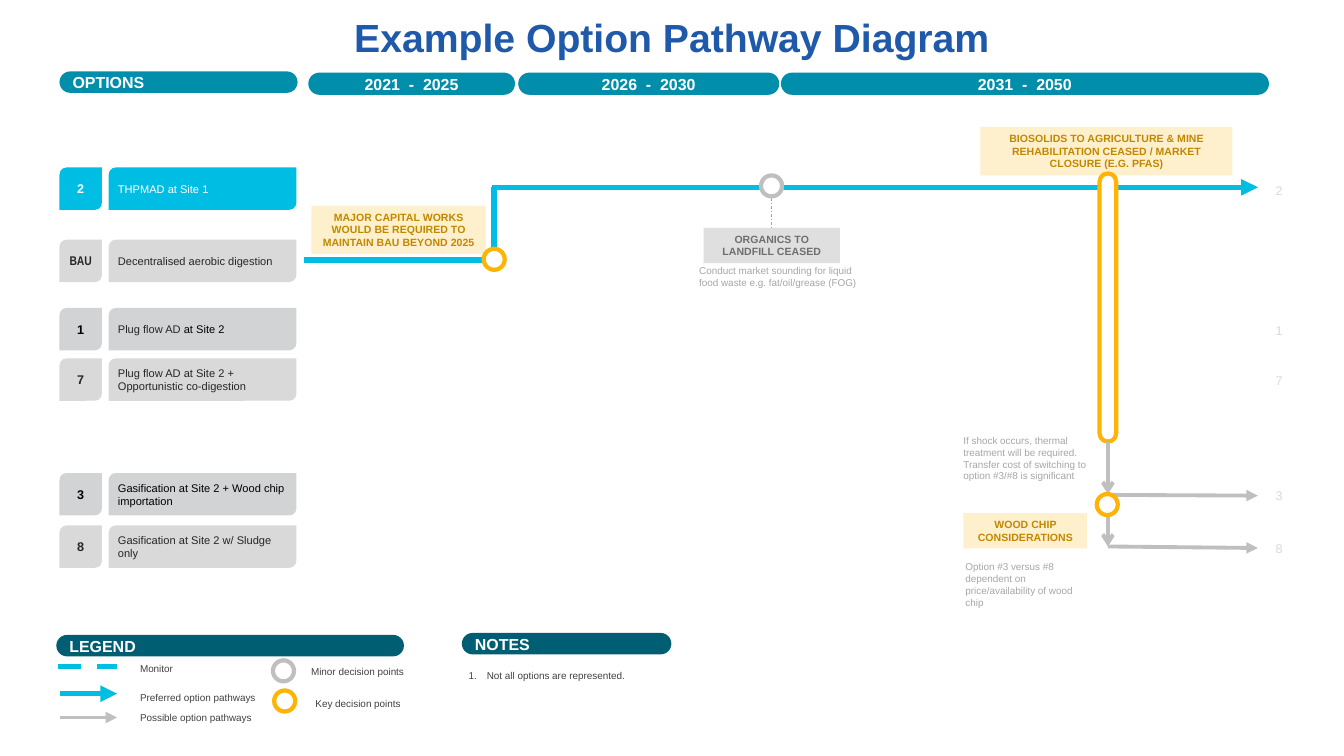
from collections import namedtuple

from lxml.etree import SubElement
from pptx import Presentation
from pptx.dml.color import RGBColor
from pptx.enum.dml import MSO_LINE
from pptx.enum.shapes import MSO_CONNECTOR, MSO_SHAPE
from pptx.enum.text import MSO_ANCHOR, PP_ALIGN
from pptx.oxml.ns import qn
from pptx.util import Cm, Pt

COLORS = {
    "white": "FFFFFF", "black": "000000", "title": "1F59A9",
    "teal": "008EAA", "petrol": "005E72", "cyan": "00BDE3",
    "amber": "FFB303", "cream": "FFF0CD", "ochre": "C28700",
    "light": "D9D9D9", "cool": "D1D3D4", "mist": "DFDFDF",
    "silver": "BFBFBF", "muted": "A6A6A6", "slate": "6E6E6E",
    "ink": "262626", "caption": "404040",
}
ROW_HEIGHT, POINT_SIZE, BAR_HEIGHT = 1.07, 0.53, 0.54
Box = namedtuple("Box", "left top width height")
# Options: code, label runs, distance from the top, fill, text colour
OPTIONS = [
    ("2", [("THPMAD at Site 1", "white")], 0, "cyan", "white"),
    ("BAU", [("Decentralised aerobic digestion", "ink")], 1.82, "light", "ink"),
    ("1", [("Plug flow AD ", "ink"), ("at Site 2", "black")], 3.54, "cool", "black"),
    ("7", [("Plug flow AD at Site 2 + Opportunistic co-digestion", "ink")], 4.81, "light", "ink"),
    ("3", [("Gasification at Site 2 + Wood chip importation", "black")], 7.7, "cool", "black"),
    ("8", [("Gasification at Site 2 w/ Sludge only", "ink")], 9.02, "light", "ink"),
]


def color(name):
    return RGBColor.from_string(COLORS[name])


def inside(box, x, y, width, height):
    return Box(box.left + x, box.top + y, width, height)


def write(holder, runs, size, bold=False, align=PP_ALIGN.LEFT, anchor=MSO_ANCHOR.TOP, font="Arial"):
    frame = holder.text_frame
    frame.word_wrap = True
    frame.vertical_anchor = anchor
    paragraph = frame.paragraphs[0]
    paragraph.alignment = align
    for wording, tint in runs:
        run = paragraph.add_run()
        run.text = wording
        run.font.name, run.font.size, run.font.bold = font, Pt(size), bold
        run.font.color.rgb = color(tint)
    return paragraph


def add_form(slide, kind, box, fill=None, outline=None):
    form = slide.shapes.add_shape(kind, *map(Cm, box))
    form.shadow.inherit = False
    if fill:
        form.fill.solid()
        form.fill.fore_color.rgb = color(fill)
    else:
        form.fill.background()
    if outline:
        form.line.color.rgb = color(outline)
        form.line.width = Pt(3)
    else:
        form.line.fill.background()
    return form


def add_capsule(slide, box, fill, outline=None):
    capsule = add_form(slide, MSO_SHAPE.ROUNDED_RECTANGLE, box, fill, outline)
    capsule.adjustments[0] = 0.5
    return capsule


def add_bar(slide, box, heading, fill, align=PP_ALIGN.LEFT):
    bar = add_capsule(slide, box, fill)
    write(bar, [(heading, "white")], 11.4, True, align, MSO_ANCHOR.MIDDLE)


def add_tile(slide, box, runs, size, fill=None, bold=False, align=PP_ALIGN.CENTER,
             font="Arial", indent=0):
    tile = add_form(slide, MSO_SHAPE.ROUND_2_DIAG_RECTANGLE, box, fill)
    frame = tile.text_frame
    frame.margin_top = frame.margin_right = frame.margin_bottom = 0
    frame.margin_left = Cm(indent)
    write(tile, runs, size, bold, align, MSO_ANCHOR.MIDDLE, font)
    return tile


def add_callout(slide, box, wording, fill="cream", tint="ochre"):
    callout = add_form(slide, MSO_SHAPE.RECTANGLE, box, fill)
    write(callout, [(wording, tint)], 7.5, True, PP_ALIGN.CENTER)
    return callout


def add_caption(slide, box, wording, tint="muted"):
    return write(slide.shapes.add_textbox(*map(Cm, box)), [(wording, tint)], 7.1)


def add_point(slide, box, x, y, outline):
    spot = inside(box, x, y, POINT_SIZE, POINT_SIZE)
    add_form(slide, MSO_SHAPE.OVAL, spot, "white", outline)


def add_path(slide, box, start, end, tint, weight, head=None, dash=None, source=None, target=None):
    points = (box.left + start[0], box.top + start[1], box.left + end[0], box.top + end[1])
    path = slide.shapes.add_connector(MSO_CONNECTOR.STRAIGHT, *map(Cm, points))
    path.line.color.rgb = color(tint)
    path.line.width = Pt(weight)
    if dash:
        path.line.dash_style = dash
    properties = path._element.spPr
    if head:
        SubElement(properties.find(qn("a:ln")), qn("a:tailEnd"), type=head)
    SubElement(properties, qn("a:effectLst"))
    if source:
        path.begin_connect(*source)
    if target:
        path.end_connect(*target)


def build_title(slide, box):
    heading = slide.shapes.add_textbox(*map(Cm, box))
    paragraph = write(heading, [("Example Option Pathway Diagram", "title")], 28, True, PP_ALIGN.CENTER)
    paragraph.space_after = Pt(12)


def build_header(slide, box):
    add_bar(slide, inside(box, 0, 0, 6, BAR_HEIGHT), "OPTIONS", "teal")
    periods = [("2021  -  2025", 6.27, 5.21), ("2026  -  2030", 11.56, 6.58),
               ("2031  -  2050", 18.18, 12.3)]
    for period, x, width in periods:
        add_bar(slide, inside(box, x, 0.03, width, 0.56), period, "teal", PP_ALIGN.CENTER)


def build_options(slide, box):
    for code, label, y, fill, tint in OPTIONS:
        font = "Arial Narrow" if code == "BAU" else "Arial"
        add_tile(slide, inside(box, 0, y, ROW_HEIGHT, ROW_HEIGHT), [(code, tint)], 9, fill, True, font=font)
        add_tile(slide, inside(box, 1.24, y, box.width - 1.24, ROW_HEIGHT), label, 7.9, fill,
                 align=PP_ALIGN.LEFT, indent=0.18)


def build_outcomes(slide, box):
    return {code: add_tile(slide, inside(box, 0, y, box.width, 1.14), [(code, "light")], 9)
            for code, _, y, _, _ in OPTIONS if code != "BAU"}


def build_pathways(slide, box, outcomes):
    # Preferred pathway from BAU to option 2
    add_path(slide, box, (0, 3.35), (4.52, 3.35), "cyan", 4)
    add_path(slide, box, (4.78, 1.52), (4.78, 3.07), "cyan", 4)
    add_path(slide, box, (4.73, 1.52), (box.width, 1.52), "cyan", 4, "triangle")
    add_callout(slide, inside(box, 0.18, 1.98, 4.39, 1.22),
                "MAJOR CAPITAL WORKS WOULD BE REQUIRED TO MAINTAIN BAU BEYOND 2025")
    add_point(slide, box, 4.52, 3.07, "amber")

    # Minor decision on organics
    organics = add_callout(slide, inside(box, 10.06, 2.54, 3.44, 0.89),
                           "ORGANICS TO LANDFILL CEASED", "mist", "slate")
    add_caption(slide, inside(box, 9.7, 3.35, 4.57, 0.86),
                "Conduct market sounding for liquid food waste e.g. fat/oil/grease (FOG)")
    add_path(slide, box, (11.78, 1.6), (11.78, 2.54), "muted", 0.5,
             dash=MSO_LINE.DASH_DOT, target=(organics, 0))
    add_point(slide, box, 11.51, 1.22, "silver")

    # Market shock and the possible pathways
    add_callout(slide, inside(box, 17.04, 0, 6.35, 1.22),
                "BIOSOLIDS TO AGRICULTURE & MINE REHABILITATION CEASED / MARKET CLOSURE (E.G. PFAS)")
    add_caption(slide, inside(box, 16.36, 7.62, 3.89, 1.47),
                "If shock occurs, thermal treatment will be required. "
                "Transfer cost of switching to option #3/#8 is significant")
    shock = add_capsule(slide, inside(box, 20.04, 1.17, 0.42, 6.76), "white", "amber")
    add_path(slide, box, (20.25, 7.93), (20.25, 9.25), "silver", 2.75, "arrow", source=(shock, 2))
    add_path(slide, box, (20.25, 9.3), (20.25, 10.57), "silver", 2.75, "arrow")
    for code, y in (("3", 9.27), ("8", 10.57)):
        add_path(slide, box, (20.25, y), (box.width, y), "silver", 2.75, "triangle",
                 target=(outcomes[code], 1))
    add_point(slide, box, 19.97, 9.25, "amber")
    add_callout(slide, inside(box, 16.61, 9.73, 3.12, 0.89), "WOOD CHIP CONSIDERATIONS")
    add_caption(slide, inside(box, 16.41, 10.8, 3.63, 1.47),
                "Option #3 versus #8 dependent on price/availability of wood chip")


def build_legend(slide, box):
    add_bar(slide, inside(box, 0, 0, box.width, BAR_HEIGHT), "LEGEND", "petrol")
    pathways = [("Monitor", 0.56, 0.79, 0.05, "cyan", 4, None, MSO_LINE.DASH),
                ("Preferred option pathways", 1.3, 1.48, 0.1, "cyan", 4, "triangle", None),
                ("Possible option pathways", 1.81, 2.08, 0.1, "silver", 2.75, "triangle", None)]
    for meaning, text_y, line_y, x, tint, weight, head, dash in pathways:
        add_path(slide, box, (x, line_y), (1.53, line_y), tint, weight, head, dash)
        add_caption(slide, inside(box, 1.86, text_y, 3.84, 0.56), meaning, "caption")
    decisions = [("Minor decision points", 6.17, 0.66, 5.46, 0.64, "silver"),
                 ("Key decision points", 6.28, 1.45, 5.49, 1.4, "amber")]
    for meaning, text_x, text_y, x, y, tint in decisions:
        add_point(slide, box, x, y, tint)
        add_caption(slide, inside(box, text_x, text_y, 3.05, 0.56), meaning, "caption")


def build_notes(slide, box):
    add_bar(slide, inside(box, 0.08, 0, 5.28, BAR_HEIGHT), "NOTES", "petrol")
    note = add_caption(slide, inside(box, 0, 0.79, box.width, 0.56),
                       "Not all options are represented.", "caption")
    properties = note._p.get_or_add_pPr()
    properties.set("marL", str(Cm(0.46)))
    properties.set("indent", str(-Cm(0.46)))
    SubElement(properties, qn("a:buAutoNum"), type="arabicPeriod")


def main():
    deck = Presentation()
    deck.slide_width, deck.slide_height = Cm(33.87), Cm(19.05)
    slide = deck.slides.add_slide(deck.slide_layouts[6])
    build_title(slide, Box(6.3, 0.2, 21.26, 1.45))
    build_header(slide, Box(1.5, 1.8, 30.48, 0.59))
    build_options(slide, Box(1.5, 4.22, 5.97, 10.09))
    outcomes = build_outcomes(slide, Box(31.7, 4.22, 1.07, 10.16))
    build_pathways(slide, Box(7.67, 3.2, 24.03, 12.27), outcomes)
    build_legend(slide, Box(1.42, 16, 8.76, 2.4))
    build_notes(slide, Box(11.56, 15.95, 22, 1.35))
    deck.save("out.pptx")


if __name__ == "__main__":
    main()
